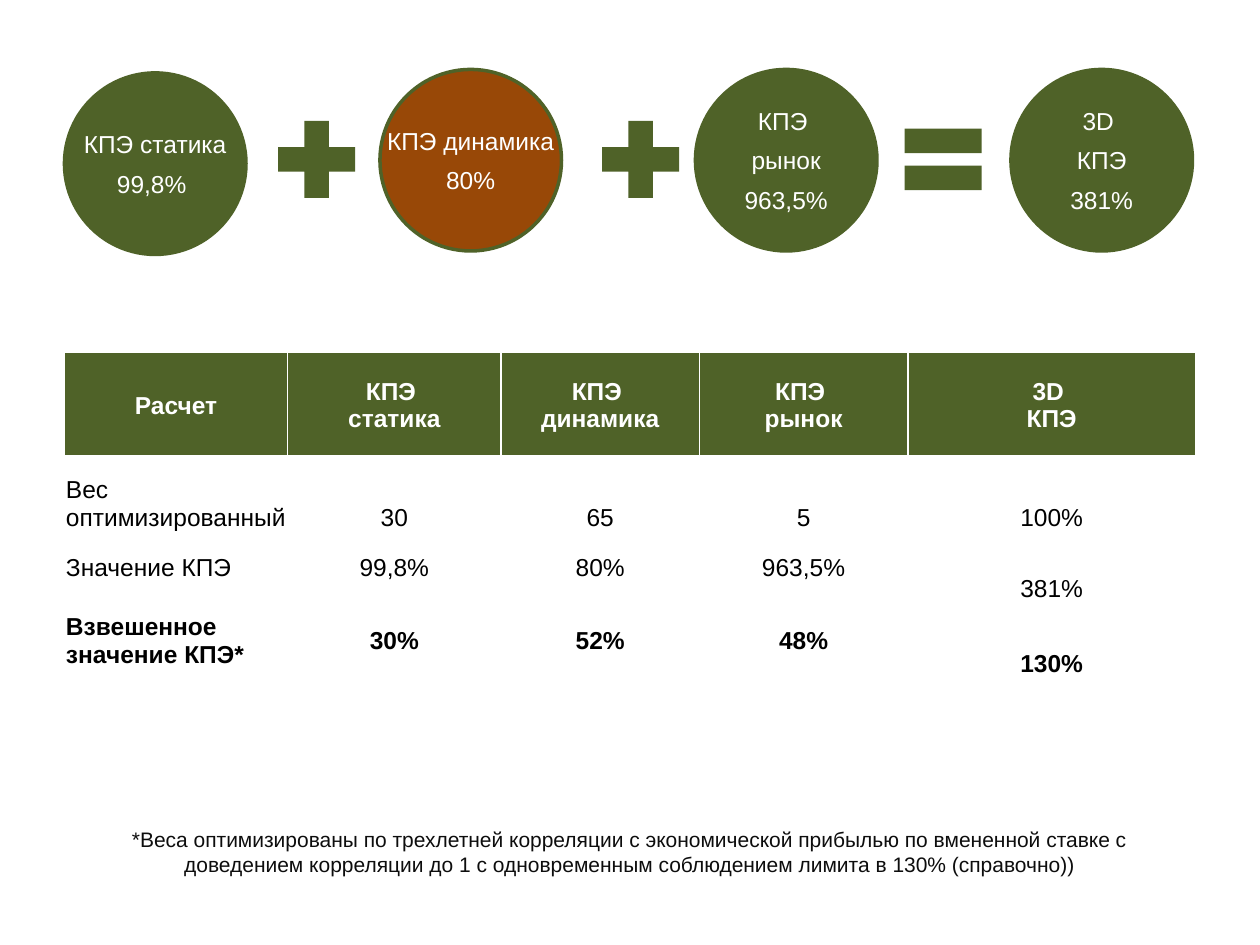
from typing import NamedTuple

from pptx import Presentation
from pptx.dml.color import RGBColor
from pptx.enum.shapes import MSO_SHAPE as Form
from pptx.enum.text import MSO_ANCHOR as Anchor, PP_ALIGN as Align
from pptx.oxml.ns import qn
from pptx.util import Cm, Pt
from lxml.etree import SubElement as Sub, Element

GREEN = RGBColor(0x4F, 0x62, 0x28)
BROWN = RGBColor(0x98, 0x48, 0x07)
WHITE = RGBColor(255, 255, 255)
BLACK = RGBColor(0, 0, 0)
INK = RGBColor(0x0D, 0x0D, 0x0D)

LEFT = 1.3
STEP = 6.36
DISC = 3.66
SIGN = 2.11


class Disc(NamedTuple):
    text: str
    top: float = 1.4
    fill: RGBColor = GREEN


class Sign(NamedTuple):
    form: Form
    left: float


class Row(NamedTuple):
    high: float
    cells: list[str]
    bold: bool = False
    low: tuple[int, ...] = ()


DISCS = [
    Disc("КПЭ статика\n99,8% ", top=1.47),
    Disc("КПЭ динамика\n80%", fill=BROWN),
    Disc("КПЭ \nрынок\n963,5%"),
    Disc("3D \nКПЭ\n381%"),
]
SIGNS = [
    Sign(Form.MATH_PLUS, 5.33),
    Sign(Form.MATH_PLUS, 11.86),
    Sign(Form.MATH_EQUAL, 17.96),
]
WIDTHS = [4.5, 4.3, 4.0, 4.2, 5.8]
ROWS = [
    Row(2.1, ["Расчет", "КПЭ \nстатика", "КПЭ \nдинамика", "КПЭ \nрынок", "3D \nКПЭ"], True),
    Row(1.5, ["Вес оптимизированный", "30", "65", "5", "100%"], low=(0, 1, 2, 3, 4)),
    Row(1.45, ["Значение КПЭ", "99,8%", "80%", "963,5%", "381%"], low=(4,)),
    Row(1.5, ["Взвешенное значение КПЭ*", "30%", "52%", "48%", "130%"], True, (4,)),
]
NOTE = (
    "*Веса оптимизированы по трехлетней корреляции с экономической прибылью "
    "по вмененной ставке с доведением корреляции до 1 с одновременным "
    "соблюдением лимита в 130% (справочно))"
)


def write(frame, text: str, color: RGBColor, size: int = 14, bold: bool = False,
          align: Align = Align.CENTER, gap: float = 0) -> None:
    for i, line in enumerate(text.split("\n")):
        para = frame.add_paragraph() if i else frame.paragraphs[0]
        para.alignment = align
        para.space_after = Pt(gap)
        run = para.add_run()
        run.text = line
        font = run.font
        font.name, font.size, font.bold = "Arial", Pt(size), bold
        font.color.rgb = color


def paint(shape, color: RGBColor) -> None:
    shape.shadow.inherit = False
    shape.fill.solid()
    shape.fill.fore_color.rgb = color


def draw_disc(slide, disc: Disc, left: float) -> None:
    shape = slide.shapes.add_shape(Form.OVAL, Cm(left), Cm(disc.top), Cm(DISC), Cm(DISC))
    paint(shape, disc.fill)
    shape.line.color.rgb = GREEN
    shape.line.width = Pt(2)
    frame = shape.text_frame
    frame.word_wrap = False
    frame.vertical_anchor = Anchor.MIDDLE
    frame.margin_left = frame.margin_right = Cm(0.05)
    frame.margin_top = frame.margin_bottom = Cm(0.05)
    write(frame, disc.text, WHITE, gap=5.6)


def draw_sign(slide, sign: Sign) -> None:
    shape = slide.shapes.add_shape(sign.form, Cm(sign.left), Cm(2.16), Cm(SIGN), Cm(SIGN))
    paint(shape, GREEN)
    shape.line.fill.background()


def edge(cell, head: bool) -> None:
    props = cell._tc.get_or_add_tcPr()
    for i, side in enumerate(("lnL", "lnR", "lnT", "lnB")):
        width = 3 if head and side == "lnB" else 1
        line = Element(qn(f"a:{side}"), w=str(Pt(width)))
        fill = Sub(line, qn("a:solidFill"))
        Sub(fill, qn("a:srgbClr"), val=str(WHITE))
        props.insert(i, line)


def draw_table(slide) -> None:
    table = slide.shapes.add_table(
        len(ROWS), len(WIDTHS), Cm(LEFT), Cm(7.11),
        Cm(sum(WIDTHS)), Cm(sum(row.high for row in ROWS))).table
    table.horz_banding = False
    for col, width in zip(table.columns, WIDTHS):
        col.width = Cm(width)
    for r, row in enumerate(ROWS):
        table.rows[r].height = Cm(row.high)
        head = r == 0
        for c, text in enumerate(row.cells):
            cell = table.cell(r, c)
            cell.fill.solid()
            cell.fill.fore_color.rgb = GREEN if head else WHITE
            cell.margin_left = cell.margin_right = cell.margin_top = Cm(0.03)
            cell.margin_bottom = 0
            cell.vertical_anchor = Anchor.BOTTOM if c in row.low else Anchor.MIDDLE
            align = Align.CENTER if head or c else Align.LEFT
            write(cell.text_frame, text, WHITE if head else BLACK, bold=row.bold, align=align)
            edge(cell, head)


def draw_note(slide) -> None:
    box = slide.shapes.add_textbox(Cm(LEFT), Cm(16.54), Cm(22.8), Cm(1.96))
    box.text_frame.word_wrap = True
    write(box.text_frame, NOTE, INK, size=12)


def main() -> None:
    deck = Presentation()
    deck.slide_width, deck.slide_height = Cm(25.4), Cm(19.05)
    slide = deck.slides.add_slide(deck.slide_layouts[6])
    draw_table(slide)
    for i, disc in enumerate(DISCS):
        draw_disc(slide, disc, LEFT + i * STEP)
    for sign in SIGNS:
        draw_sign(slide, sign)
    draw_note(slide)
    deck.save("out.pptx")


if __name__ == "__main__":
    main()
